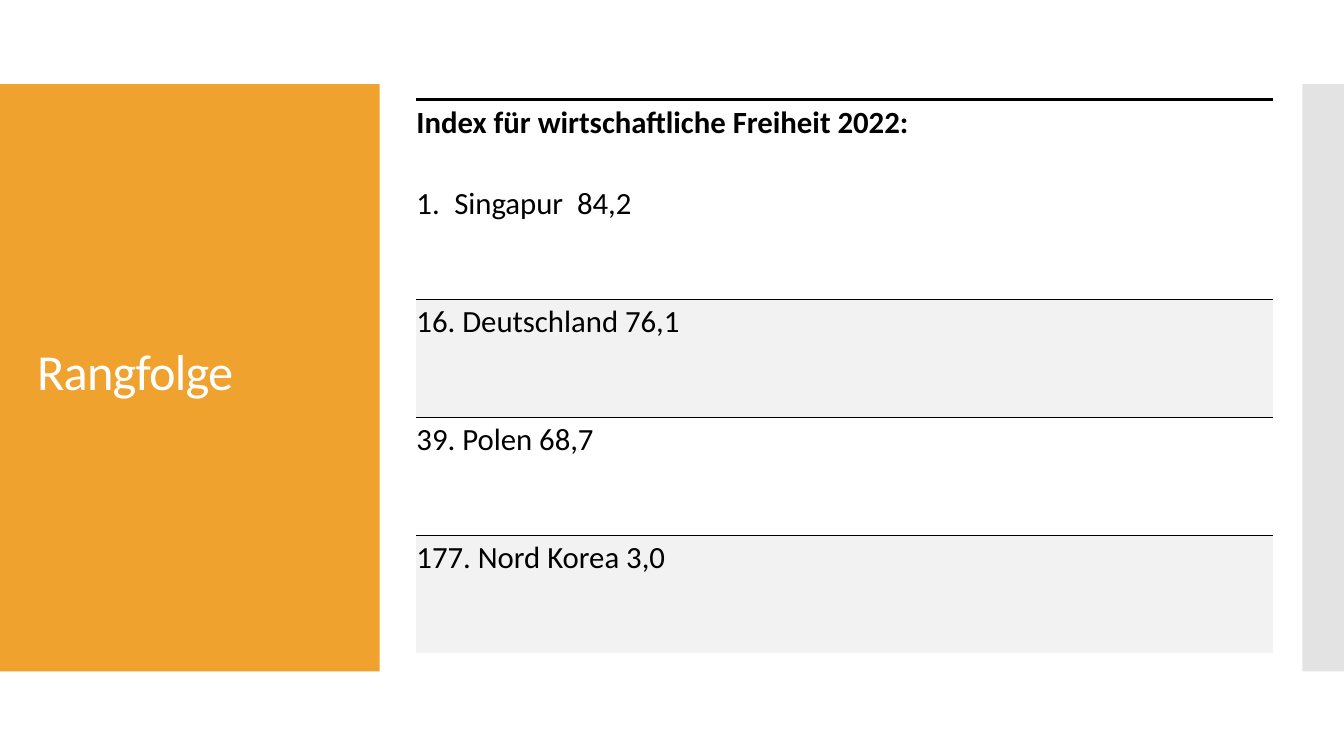
from lxml import etree
from pptx import Presentation
from pptx.dml.color import RGBColor
from pptx.enum import shapes, text
from pptx.oxml.ns import qn
from pptx.util import Pt

COLORS = {"accent": "F0A22E", "bar": "C8C8C8", "band": "F2F2F2",
          "ink": "000000", "white": "FFFFFF"}
FONT = "Calibri"
NO_STYLE = "{2D5ABB26-0587-4C30-8999-92F81FD0307C}"

# text, row height, banded, top line width
ROWS = [
    ("Index für wirtschaftliche Freiheit 2022:", 58.2, False, 2.25),
    ("Singapur  84,2", 84.24, False, None),
    ("16. Deutschland 76,1", 84.24, True, 0.5),
    ("39. Polen 68,7", 84.24, False, None),
    ("177. Nord Korea 3,0", 84.24, True, 0.5),
]


def rgb(name):
    return RGBColor.from_string(COLORS[name])


def set_attrs(obj, formats):
    for key, value in formats.items():
        setattr(obj, key, value)


def add_run(p, words, size, color, bold=False):
    r = p.add_run()
    r.text = words
    set_attrs(r.font, {"name": FONT, "size": Pt(size), "bold": bold})
    r.font.color.rgb = rgb(color)
    return r


def add_panel(s, box, color, opacity=None):
    sp = s.shapes.add_shape(shapes.MSO_SHAPE.RECTANGLE, *map(Pt, box))
    sp.shadow.inherit = False
    sp.fill.solid()
    sp.fill.fore_color.rgb = rgb(color)
    sp.line.fill.background()
    if opacity:
        clr = sp.fill._xPr.find(".//" + qn("a:srgbClr"))
        etree.SubElement(clr, qn("a:alpha"), val=str(opacity * 1000))


def add_title_panel(s, box, words):
    left, top, width, height = box
    add_panel(s, box, "accent")
    title = s.shapes.title
    s.shapes._spTree.append(title._element)  # in front of the panel
    set_attrs(title, {"left": Pt(left + 19.4), "top": Pt(top + 149.5),
                      "width": Pt(width - 39.4), "height": Pt(80.6)})
    tf = title.text_frame
    set_attrs(tf, {"word_wrap": True, "auto_size": text.MSO_AUTO_SIZE.NONE,
                   "vertical_anchor": text.MSO_ANCHOR.BOTTOM})
    p = tf.paragraphs[0]
    set_attrs(p, {"alignment": text.PP_ALIGN.LEFT, "line_spacing": 0.9})
    r = add_run(p, words, 36, "white")
    r.font._element.set("spc", "-60")


def add_top_line(cell, width):
    ln = etree.Element(qn("a:lnT"), w=str(Pt(width)))
    fill = etree.SubElement(ln, qn("a:solidFill"))
    etree.SubElement(fill, qn("a:srgbClr"), val=COLORS["ink"])
    cell._tc.get_or_add_tcPr().insert(0, ln)


def add_number(p, indent):
    pPr = p._p.get_or_add_pPr()
    pPr.set("marL", str(Pt(indent)))
    pPr.set("indent", str(-Pt(indent)))
    etree.SubElement(pPr, qn("a:buFont"), typeface="+mj-lt")
    etree.SubElement(pPr, qn("a:buAutoNum"), type="arabicPeriod")


def add_ranking(s, box):
    table = s.shapes.add_table(len(ROWS), 1, *map(Pt, box)).table
    set_attrs(table, {"first_row": False, "horz_banding": False})
    table._tbl.tblPr.find(qn("a:tableStyleId")).text = NO_STYLE
    for i, (words, height, banded, line) in enumerate(ROWS):
        table.rows[i].height = Pt(height)
        cell = table.cell(i, 0)
        set_attrs(cell, {"margin_left": 0, "margin_top": Pt(3),
                         "margin_right": Pt(8), "margin_bottom": Pt(23)})
        if banded:
            cell.fill.solid()
            cell.fill.fore_color.rgb = rgb("band")
        else:
            cell.fill.background()
        if line:
            add_top_line(cell, line)
        p = cell.text_frame.paragraphs[0]
        add_run(p, words, 22, "ink", bold=i == 0)
        if i == 1:
            add_number(p, 27)


def main():
    prs = Presentation()
    set_attrs(prs, {"slide_width": Pt(960), "slide_height": Pt(540)})
    s = prs.slides.add_slide(prs.slide_layouts[5])
    # Left title panel, right edge bar, ranking table
    add_title_panel(s, (0, 60, 271.2, 419.5), "Rangfolge")
    add_panel(s, (930.2, 60, 29.8, 419.5), "bar", opacity=50)
    add_ranking(s, (297.5, 71.2, 612, sum(row[1] for row in ROWS)))
    prs.save("out.pptx")


if __name__ == "__main__":
    main()
